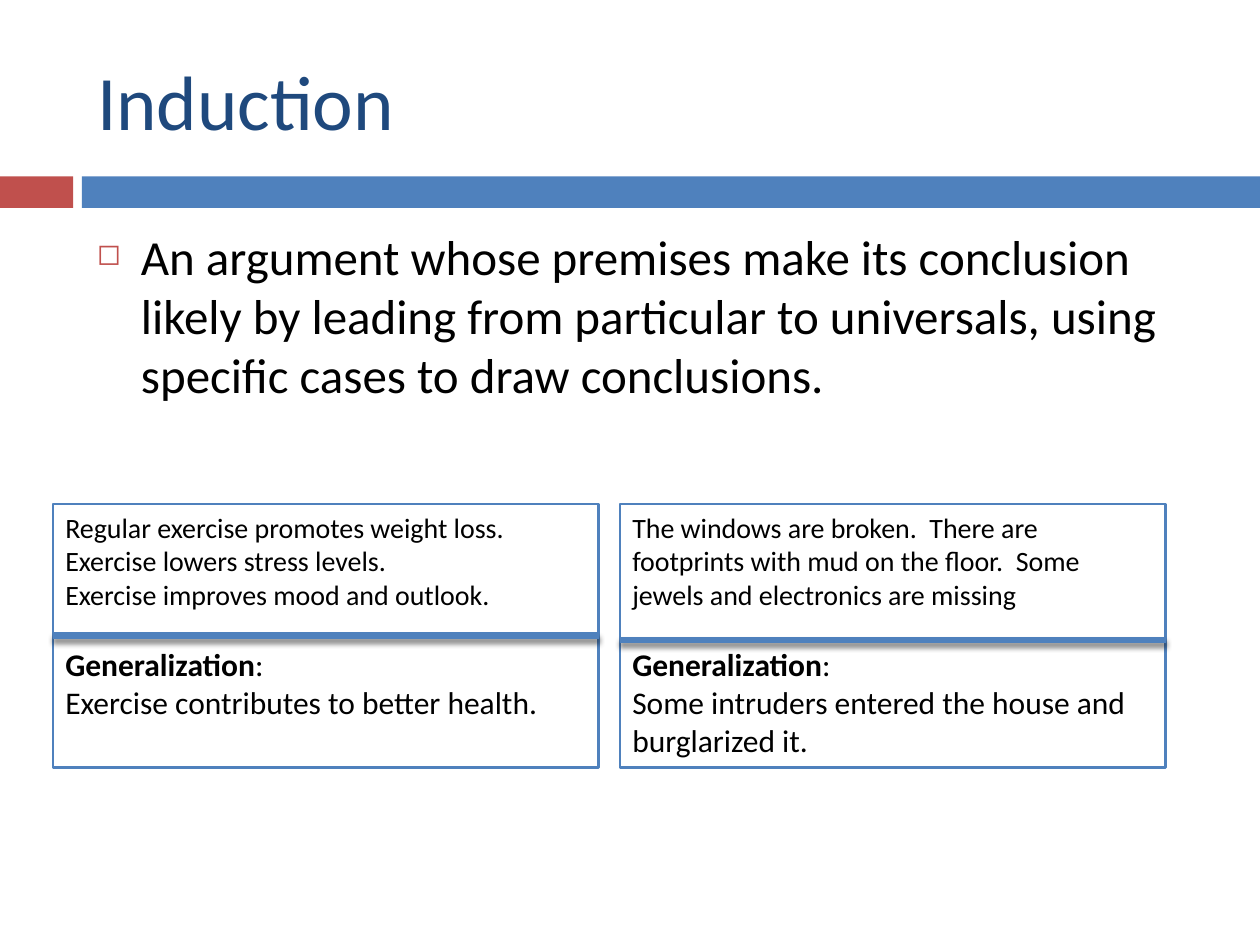
from lxml import etree
from pptx import Presentation
from pptx.dml.color import RGBColor
from pptx.enum import shapes, text
from pptx.oxml import parse_xml
from pptx.oxml.ns import nsdecls, qn
from pptx.util import Inches, Pt

RED = RGBColor(0xC0, 0x50, 0x4D)
BLUE = RGBColor(0x4F, 0x81, 0xBD)
NAVY = RGBColor(0x1F, 0x49, 0x7D)
BLACK = RGBColor(0, 0, 0)
WHITE = RGBColor(0xFF, 0xFF, 0xFF)


def write(paragraph, words, size=18, color=BLACK, bold=False, before=0):
    run = paragraph.add_run()
    run.text = words
    run.font.name = "Calibri"
    run.font.size = Pt(size)
    run.font.bold = bold
    run.font.color.rgb = color
    paragraph.alignment = text.PP_ALIGN.LEFT
    paragraph.space_before = Pt(before)


def add_rectangle(left, top, width, height, fill, line=None):
    shape = slide.shapes.add_shape(
        shapes.MSO_SHAPE.RECTANGLE,
        Inches(left), Inches(top), Inches(width), Inches(height))
    shape.shadow.inherit = False
    shape.fill.solid()
    shape.fill.fore_color.rgb = fill
    if line is None:
        shape.line.fill.background()
    else:
        shape.line.color.rgb = line
        shape.line.width = Pt(1.5)
    return shape


presentation = Presentation()
presentation.slide_width = Inches(10)
presentation.slide_height = Inches(7.5)
slide = presentation.slides.add_slide(presentation.slide_layouts[5])

# Band under the title
add_rectangle(0, 1.4, 0.58, 0.25, RED)
add_rectangle(0.65, 1.4, 9.35, 0.25, BLUE)

title = slide.shapes.title
title.left, title.top = Inches(0.67), Inches(0.25)
title.width, title.height = Inches(8.92), Inches(1.08)
title.text_frame.vertical_anchor = text.MSO_ANCHOR.MIDDLE
write(title.text_frame.paragraphs[0], "Induction", size=44, color=NAVY)

# Definition with a hollow square bullet
definition = slide.shapes.add_textbox(
    Inches(0.67), Inches(1.75), Inches(8.92), Inches(4.92))
definition.text_frame.word_wrap = True
paragraph = definition.text_frame.paragraphs[0]
write(paragraph,
      "An argument whose premises make its conclusion likely by leading from "
      "particular to universals, using specific cases to draw conclusions.",
      size=28, before=7)
properties = paragraph._p.get_or_add_pPr()
properties.set("marL", str(Inches(0.35)))
properties.set("indent", str(-Inches(0.35)))
bullet_color = etree.SubElement(properties, qn("a:buClr"))
etree.SubElement(bullet_color, qn("a:srgbClr"), val=str(RED))
etree.SubElement(properties, qn("a:buSzPct"), val="60000")
etree.SubElement(properties, qn("a:buChar"), char="◻")

# Examples: left edge, height of the dividing line, premises, conclusion
BOX_TOP, BOX_WIDTH, BOX_HEIGHT = 4, 4.33, 2.09
examples = [
    (0.42, 5.04,
     ["Regular exercise promotes weight loss.",
      "Exercise lowers stress levels.",
      "Exercise improves mood and outlook."],
     "Exercise contributes to better health."),
    (4.92, 5.08,
     ["The windows are broken.  There are footprints with mud on the "
      "floor.  Some jewels and electronics are missing"],
     "Some intruders entered the house and burglarized it."),
]

boxes = []
for left, divider_top, premises, conclusion in examples:
    box = add_rectangle(left, BOX_TOP, BOX_WIDTH, BOX_HEIGHT, WHITE, BLUE)
    boxes.append(box)
    frame = box.text_frame
    frame.word_wrap = True
    frame.vertical_anchor = text.MSO_ANCHOR.TOP
    write(frame.paragraphs[0], premises[0], size=16)
    for premise in premises[1:]:
        write(frame.add_paragraph(), premise, size=16)
    heading = frame.add_paragraph()
    write(heading, "Generalization", bold=True)
    write(heading, ":", before=19.5)
    write(frame.add_paragraph(), conclusion)

dividers = []
for left, divider_top, premises, conclusion in examples:
    divider = slide.shapes.add_connector(
        shapes.MSO_CONNECTOR.STRAIGHT, Inches(left), Inches(divider_top),
        Inches(left + BOX_WIDTH), Inches(divider_top))
    dividers.append(divider)
    divider.line.color.rgb = BLUE
    divider.line.width = Pt(3.75)
    divider._element.spPr.append(parse_xml(
        f'<a:effectLst {nsdecls("a")}>'
        f'<a:outerShdw blurRad="{Pt(3)}" dist="{Pt(2.4)}" dir="5400000" '
        'rotWithShape="0"><a:srgbClr val="000000"><a:alpha val="45000"/>'
        '</a:srgbClr></a:outerShdw></a:effectLst>'))

# Only the first divider meets the middle of its box's sides
dividers[0].begin_connect(boxes[0], 1)
dividers[0].end_connect(boxes[0], 3)

presentation.save("out.pptx")
